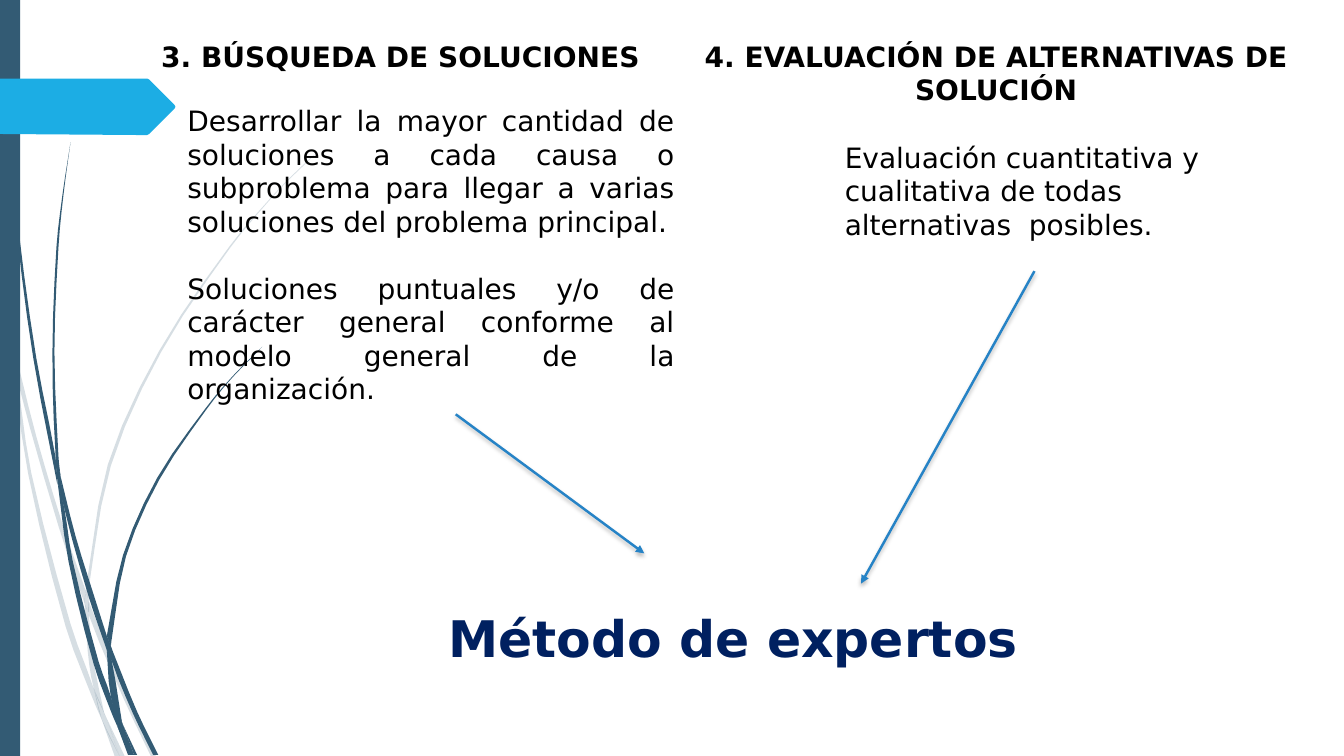
from math import dist
from pptx import Presentation
from pptx.dml.color import RGBColor
from pptx.enum.shapes import MSO_CONNECTOR as CONN, MSO_SHAPE as SHAPE
from pptx.enum.text import MSO_AUTO_SIZE as FIT, PP_ALIGN as ALIGN
from pptx.oxml import parse_xml
from pptx.oxml.ns import nsdecls, qn
from pptx.util import Inches, Pt
from lxml import etree

# Grid of 1333 columns by 750 rows; every length below counts its cells
CELL = Inches(0.01)
COLS, ROWS = 1333, 750
FONT = "DejaVu Sans"
TEAL = RGBColor(0x33, 0x5B, 0x74)
SKY = RGBColor(0x1C, 0xAD, 0xE4)
BLUE = RGBColor(0x26, 0x83, 0xC6)
NAVY = RGBColor(0x00, 0x20, 0x60)
BLACK = RGBColor(0x00, 0x00, 0x00)

# Each blade is a pair of edges, both running from the tip downwards
PALE_BLADES = [
    ([(0, 299), (11, 350)], [(0, 282), (9, 322), (11, 350)]),
    ([(14, 345), (17, 376), (58, 522), (84, 599)],
     [(14, 345), (36, 433), (62, 520), (85, 586)]),
    ([(88, 596), (88, 610), (123, 694), (150, 751)],
     [(88, 596), (92, 607), (127, 692), (155, 751)]),
    ([(105, 711), (119, 751)], [(105, 711), (124, 751)]),
    ([(11, 350), (28, 470), (65, 621), (92, 693), (101, 714)],
     [(11, 350), (17, 376), (31, 469), (70, 619), (93, 683), (101, 714)]),
    ([(84, 599), (87, 646), (93, 683), (105, 711)],
     [(84, 599), (88, 610), (91, 646), (103, 706), (105, 711)]),
    ([(312, 153), (289, 175), (268, 197), (228, 244), (158, 348), (107, 461),
      (85, 586)],
     [(312, 154), (290, 175), (268, 198), (229, 245), (160, 349), (110, 462),
      (88, 584), (88, 596)]),
    ([(101, 714), (114, 751)], [(101, 714), (119, 751)]),
    ([(85, 586), (84, 599), (88, 608)], [(85, 586), (88, 596), (88, 610)]),
    ([(93, 683), (101, 714), (119, 751)],
     [(93, 683), (105, 711), (119, 751)]),
]
DARK_BLADES = [
    ([(3, 0), (4, 48), (7, 110), (17, 233), (33, 355), (57, 481)],
     [(4, 0), (5, 48), (8, 109), (19, 232), (36, 355), (55, 453), (57, 481)]),
    ([(60, 472), (64, 505), (88, 592), (106, 645)],
     [(60, 472), (75, 532), (93, 590), (106, 631)]),
    ([(110, 641), (111, 656), (132, 708), (152, 749)],
     [(110, 641), (113, 649), (136, 706), (157, 749)]),
    ([(57, 477), (68, 557), (93, 659), (111, 708), (117, 722)],
     [(57, 477), (64, 505), (72, 556), (98, 657), (110, 691), (117, 722)]),
    ([(70, 141), (62, 193), (56, 245), (52, 349), (55, 449), (60, 472)],
     [(70, 141), (63, 193), (58, 245), (54, 349), (58, 453), (60, 472)]),
    ([(122, 719), (133, 749)], [(122, 719), (136, 749)]),
    ([(55, 449), (57, 477), (64, 505)], [(55, 449), (60, 472), (64, 505)]),
    ([(260, 344), (231, 373), (204, 405), (156, 474), (122, 551), (106, 631)],
     [(261, 344), (231, 374), (205, 406), (158, 476), (125, 552), (111, 633),
      (110, 641)]),
    ([(117, 722), (127, 749)], [(117, 722), (131, 749)]),
    ([(106, 645), (110, 691), (122, 719)],
     [(106, 645), (111, 656), (121, 716), (122, 719)]),
    ([(106, 631), (106, 645), (111, 656)],
     [(106, 631), (110, 641), (111, 656)]),
    ([(110, 691), (117, 722), (130, 749)],
     [(110, 691), (122, 719), (133, 749)]),
]
MARKER = [(173, 108), (148, 133), (146, 134), (136, 134), (0, 133), (0, 78),
          (146, 78), (148, 79), (173, 104), (174, 106)]


def cells(*values):
    return [round(v * CELL) for v in values]


def smooth_edge(points, steps=3):
    """Hermite curve through the points, with chord-length tangents."""
    if len(points) == 2:
        return points
    padded = [points[0], *points, points[-1]]
    curve = [points[0]]
    for a, b, c, d in zip(padded, padded[1:], padded[2:], padded[3:]):
        span = dist(b, c)
        start = span / (dist(a, b) + span)
        end = span / (span + dist(c, d))
        for i in range(1, steps + 1):
            t = i / steps
            h = t * t * (3 - 2 * t)
            curve.append(tuple(
                q + h * (r - q) + t * (1 - t) ** 2 * start * (r - p)
                - t * t * (1 - t) * end * (u - q)
                for p, q, r, u in zip(a, b, c, d)))
    return curve


def paint(sp, color, alpha=None):
    sp.shadow.inherit = False
    sp.fill.solid()
    sp.fill.fore_color.rgb = color
    sp.line.fill.background()
    if alpha:
        srgb = next(sp._element.spPr.iter(qn("a:srgbClr")))
        etree.SubElement(srgb, qn("a:alpha")).set("val", str(alpha * 1000))


def add_outline(shapes, origin, points, color, alpha=None):
    x, y = origin
    outline = [cells(x + px, y + py) for px, py in points]
    fb = shapes.build_freeform(*outline[0])
    fb.add_line_segments(outline[1:], close=True)
    paint(fb.convert_to_shape(), color, alpha)


def add_side_decoration(s, box):
    x, y, width, height = box
    for blades, alpha in ((PALE_BLADES, 20), (DARK_BLADES, None)):
        group = s.shapes.add_group_shape()
        for left, right in blades:
            points = smooth_edge(left) + smooth_edge(right)[:0:-1]
            add_outline(group.shapes, (x, y), points, TEAL, alpha)
    bar = s.shapes.add_shape(SHAPE.RECTANGLE, *cells(x, y, 20, height))
    paint(bar, TEAL)
    add_outline(s.shapes, (x, y), MARKER, SKY)


def add_text(s, box, paragraphs, size=20, color=BLACK, bold=False,
             align=ALIGN.LEFT, wrap=True, gap=0, indent=0):
    tf = s.shapes.add_textbox(*cells(*box)).text_frame
    tf.word_wrap = wrap
    tf.auto_size = FIT.SHAPE_TO_FIT_TEXT
    for i, text in enumerate(paragraphs):
        p = tf.add_paragraph() if i else tf.paragraphs[0]
        p.alignment = align
        if i:
            p.space_before = Pt(gap)
        if indent:
            p._p.get_or_add_pPr().set("marL", str(cells(indent)[0]))
        r = p.add_run()
        r.text = text
        r.font.name, r.font.size = FONT, Pt(size)
        r.font.bold, r.font.color.rgb = bold, color


def add_arrow(s, start, end):
    cx = s.shapes.add_connector(CONN.STRAIGHT, *cells(*start, *end))
    cx.line.color.rgb, cx.line.width = BLUE, Pt(1.75)
    ln = cx.line._get_or_add_ln()
    etree.SubElement(ln, qn("a:tailEnd")).set("type", "triangle")
    cx._element.spPr.append(parse_xml(
        f'<a:effectLst {nsdecls("a")}><a:outerShdw blurRad="{Pt(3)}" '
        f'dist="{Pt(2)}" dir="5400000" rotWithShape="0">'
        '<a:srgbClr val="000000"><a:alpha val="25000"/></a:srgbClr>'
        '</a:outerShdw></a:effectLst>'))


def add_search_column(s, box):
    x, y, width, height = box
    add_text(s, (x + 26, y + 64, width, height - 64), [
        "Desarrollar la mayor cantidad de soluciones a cada causa o "
        "subproblema para llegar a varias soluciones del problema principal.",
        "Soluciones puntuales y/o de carácter general conforme al modelo "
        "general de la organización."], align=ALIGN.JUSTIFY, gap=23.5)
    add_text(s, (x, y, width, 44), ["3. BÚSQUEDA DE SOLUCIONES"],
             bold=True, align=ALIGN.JUSTIFY, wrap=False)


def add_evaluation_column(s, box):
    x, y, width, height = box
    add_text(s, (x, y, width, 77),
             ["4. EVALUACIÓN DE ALTERNATIVAS DE SOLUCIÓN"],
             bold=True, align=ALIGN.CENTER)
    add_text(s, (x + 102, y + 100, 529, height - 100),
             ["Evaluación cuantitativa y cualitativa de todas "
              "alternativas  posibles."], indent=73)


def add_conclusion(s, box):
    add_text(s, box, ["Método de expertos"], size=36, color=NAVY,
             bold=True, align=ALIGN.CENTER, wrap=False)


def main():
    prs = Presentation()
    prs.slide_width, prs.slide_height = cells(COLS, ROWS)
    s = prs.slides.add_slide(prs.slide_layouts[6])
    add_side_decoration(s, (0, 0, 174, ROWS))
    # Two steps leading to one method
    add_search_column(s, (150, 34, 503, 377))
    add_conclusion(s, (428, 597.5, 598, 71))
    add_evaluation_column(s, (653, 34, 670, 211))
    add_arrow(s, (452, 411), (639, 549))
    add_arrow(s, (1026, 269), (854, 579))
    prs.save("out.pptx")


if __name__ == "__main__":
    main()
